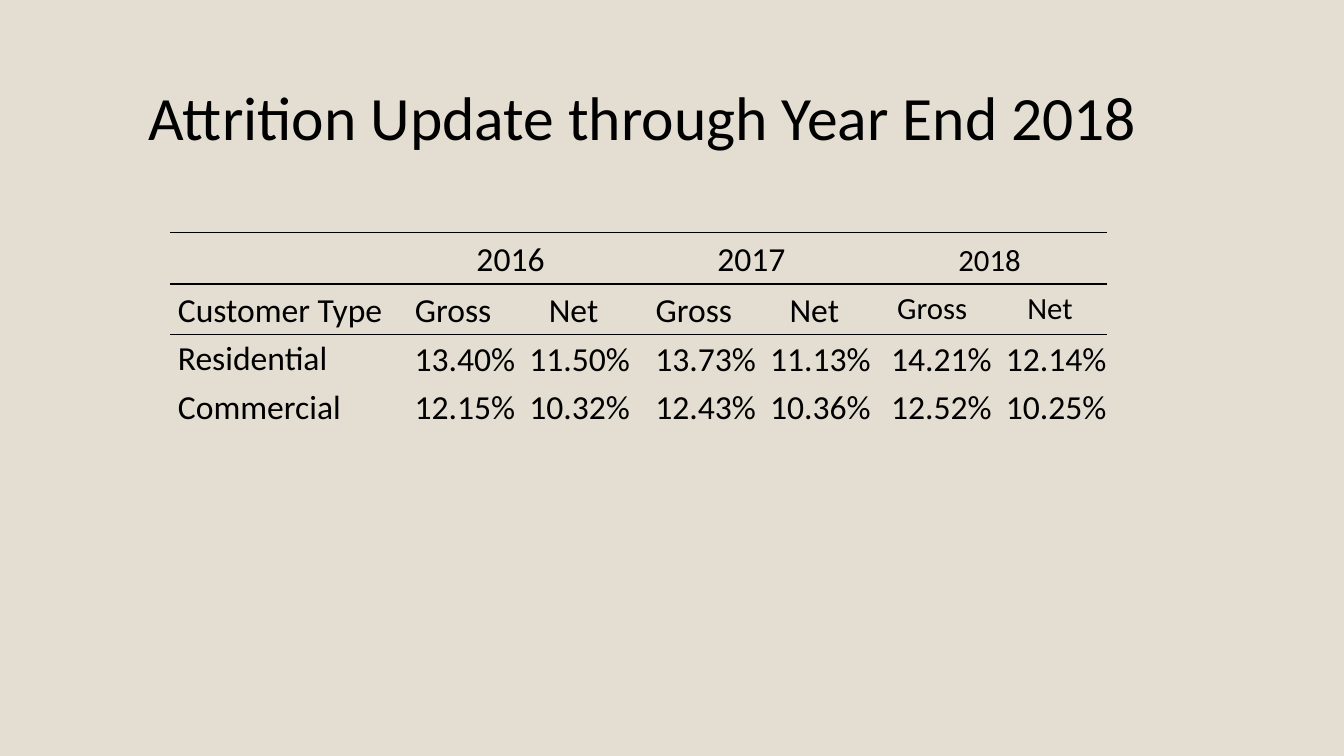
from lxml import etree
from pptx import Presentation
from pptx.dml.color import RGBColor
from pptx.enum.text import MSO_ANCHOR, MSO_AUTO_SIZE, PP_ALIGN
from pptx.oxml.ns import qn
from pptx.util import Pt

LEFT, CENTER, RIGHT = PP_ALIGN.LEFT, PP_ALIGN.CENTER, PP_ALIGN.RIGHT
MIDDLE, BOTTOM = MSO_ANCHOR.MIDDLE, MSO_ANCHOR.BOTTOM
FIXED = MSO_AUTO_SIZE.NONE
BLACK = RGBColor(0x00, 0x00, 0x00)
SAND = RGBColor(0xE3, 0xDE, 0xD1)
PLAIN = "{2D5ABB26-0587-4C30-8999-92F81FD0307C}"  # no style, no grid

YEARS = ["2016", "2017", "2018"]
ROWS = [
    ["Customer Type"] + ["Gross", "Net"] * len(YEARS),
    ["Residential", "13.40%", "11.50%", "13.73%", "11.13%", "14.21%", "12.14%"],
    ["Commercial", "12.15%", "10.32%", "12.43%", "10.36%", "12.52%", "10.25%"],
]
WIDTHS = [157, 90, 82, 90, 82, 86.4, 82]
HEIGHTS = [36.5, 36.4, 31, 31]
WIDE = {"margin_left": Pt(5.4), "margin_right": Pt(5.4),
        "margin_top": Pt(2.7), "margin_bottom": Pt(2.7)}
TIGHT = {"margin_left": Pt(0.7), "margin_right": Pt(0.7),
         "margin_top": Pt(0.7), "margin_bottom": Pt(0)}


def apply(item, values):
    for name, value in values.items():
        setattr(item, name, value)


class Deck:
    def __init__(self):
        self.show = Presentation()
        self.show.slide_width, self.show.slide_height = Pt(960), Pt(540)
        self.slide = self.show.slides.add_slide(self.show.slide_layouts[5])
        fill = self.slide.background.fill
        fill.solid()
        fill.fore_color.rgb = SAND

    def label(self, frame, text, size, align):
        para = frame.paragraphs[0]
        para.alignment = align
        run = para.add_run()
        run.text = text
        apply(run.font, {"name": "Calibri", "size": Pt(size), "bold": False})
        run.font.color.rgb = BLACK
        return para

    def title(self, text, left, top, width, height):
        box = self.slide.shapes.title
        apply(box, {"left": Pt(left), "top": Pt(top),
                    "width": Pt(width), "height": Pt(height)})
        apply(box.text_frame, {"auto_size": FIXED, "word_wrap": True,
                               "vertical_anchor": MIDDLE})
        self.label(box.text_frame, text, 44, RIGHT).line_spacing = 0.9

    def table(self, left, top, widths, heights):
        frame = self.slide.shapes.add_table(
            len(heights), len(widths), Pt(left), Pt(top),
            Pt(sum(widths)), Pt(sum(heights)))
        grid = frame.table
        apply(grid, {"first_row": False, "horz_banding": False})
        grid._tbl.tblPr.find(qn("a:tableStyleId")).text = PLAIN
        for col, width in zip(grid.columns, widths):
            col.width = Pt(width)
        for row, height in zip(grid.rows, heights):
            row.height = Pt(height)
        return grid

    def rule(self, cell, side):
        """Draw a thin line on one side of a cell: T or B."""
        line = etree.SubElement(cell._tc.get_or_add_tcPr(), qn("a:ln" + side),
                                w=str(Pt(1)))
        fill = etree.SubElement(line, qn("a:solidFill"))
        etree.SubElement(fill, qn("a:srgbClr"), val=str(BLACK))

    def cell(self, cell, text, size, align, anchor, insets):
        apply(cell, {"vertical_anchor": anchor, **insets})
        self.label(cell.text_frame, text, size, align)


def main():
    deck = Deck()
    deck.title("Attrition Update through Year End 2018", 92.9, 48.2, 727, 75.6)
    grid = deck.table(121.7, 166.3, WIDTHS, HEIGHTS)

    for col in range(len(WIDTHS)):
        for row in range(2):
            for side in "TB":
                deck.rule(grid.cell(row, col), side)
    for cell in grid.iter_cells():
        cell.fill.background()

    last = len(WIDTHS) - 2
    for num, year in enumerate(YEARS):
        col = 1 + 2 * num
        head = grid.cell(0, col)
        head.merge(grid.cell(0, col + 1))
        deck.cell(head, year, 22 if col == last else 24, CENTER, BOTTOM, WIDE)

    for row, texts in enumerate(ROWS, 1):
        for col, text in enumerate(texts):
            size, align, anchor, insets = 24, LEFT, MIDDLE, WIDE
            if row == 1:
                small = col >= last
                size, anchor = (22, MIDDLE) if small else (24, BOTTOM)
                align = CENTER if col else LEFT
            elif col:
                align, insets = RIGHT, TIGHT
            deck.cell(grid.cell(row, col), text, size, align, anchor, insets)

    deck.show.save("out.pptx")


if __name__ == "__main__":
    main()
